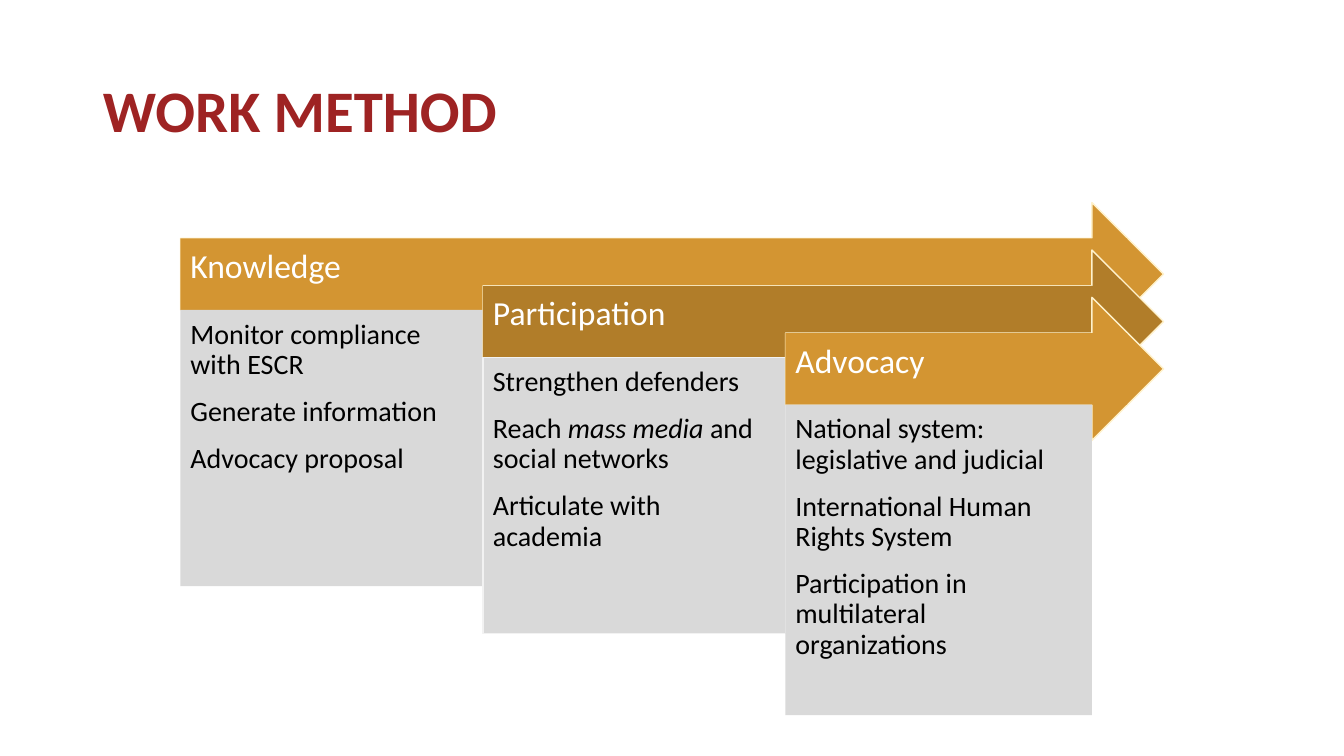
from dataclasses import dataclass

from pptx import Presentation
from pptx.dml.color import RGBColor
from pptx.enum.shapes import MSO_SHAPE
from pptx.enum.text import MSO_ANCHOR, MSO_AUTO_SIZE, PP_ALIGN
from pptx.shapes.autoshape import Shape
from pptx.slide import Slide
from pptx.text.text import TextFrame
from pptx.util import Inches, Pt

RECTANGLE, RIGHT_ARROW = MSO_SHAPE.RECTANGLE, MSO_SHAPE.RIGHT_ARROW
TOP, MIDDLE = MSO_ANCHOR.TOP, MSO_ANCHOR.MIDDLE
LEFT, NO_AUTOFIT = PP_ALIGN.LEFT, MSO_AUTO_SIZE.NONE

RED = RGBColor(0x9E, 0x23, 0x23)
GOLD = RGBColor(0xD3, 0x95, 0x32)
BRONZE = RGBColor(0xB1, 0x7D, 0x29)
CREAM = RGBColor(0xFF, 0xF2, 0xCC)
GREY = RGBColor(0xD9, 0xD9, 0xD9)
PALE_GREY = RGBColor(0xF2, 0xF2, 0xF2)
WHITE = RGBColor(0xFF, 0xFF, 0xFF)
BLACK = RGBColor(0x00, 0x00, 0x00)

FONT = "Calibri"
TITLE_ONLY_LAYOUT = 5
FIRST_LEFT, FIRST_TOP = 1.79, 2.01
STEP_RIGHT, STEP_DOWN = 3.0, 0.47
ARROW_TIP, ARROW_HEIGHT = 11.54, 1.42
BAND_RIGHT, BAND_HEIGHT = 11.18, ARROW_HEIGHT / 2
BAND_INSETS = (0.1, 0.1, 0.28, 0.23)
PANEL_INSETS = (0.1, 0.1, 0.1, 0.1)


@dataclass(frozen=True)
class Span:
    text: str
    italic: bool = False


@dataclass(frozen=True)
class Stage:
    name: str
    color: RGBColor
    items: tuple[tuple[Span, ...], ...]
    panel_width: float = 3.0
    panel_height: float = 2.74
    panel_line: RGBColor | None = None


STAGES = (
    Stage("Knowledge", GOLD, (
        (Span("Monitor compliance with ESCR"),),
        (Span("Generate information"),),
        (Span("Advocacy proposal"),),
    )),
    Stage("Participation", BRONZE, (
        (Span("Strengthen defenders"),),
        (Span("Reach "), Span("mass media ", italic=True), Span("and social networks")),
        (Span("Articulate with academia"),),
    ), panel_line=PALE_GREY),
    Stage("Advocacy", GOLD, (
        (Span("National system: legislative and judicial"),),
        (Span("International Human Rights System"),),
        (Span("Participation in multilateral organizations"),),
    ), panel_width=3.04, panel_height=3.08),
)


def add_block(page: Slide, kind: MSO_SHAPE, left: float, top: float, width: float,
              height: float, fill: RGBColor, line: RGBColor | None = None) -> Shape:
    block = page.shapes.add_shape(kind, Inches(left), Inches(top), Inches(width), Inches(height))
    block.shadow.inherit = False
    block.fill.solid()
    block.fill.fore_color.rgb = fill
    if line is None:
        block.line.fill.background()
    else:
        block.line.color.rgb = line
        block.line.width = Pt(1)
    return block


def set_frame(frame: TextFrame, anchor: MSO_ANCHOR,
              insets: tuple[float, float, float, float]) -> None:
    frame.word_wrap = True
    frame.auto_size = NO_AUTOFIT
    frame.vertical_anchor = anchor
    left, top, right, bottom = insets
    frame.margin_left, frame.margin_top = Inches(left), Inches(top)
    frame.margin_right, frame.margin_bottom = Inches(right), Inches(bottom)


def write_items(frame: TextFrame, items: tuple[tuple[Span, ...], ...], size: int,
                color: RGBColor, bold: bool = False) -> None:
    """Write one left-aligned paragraph per item."""
    for number, item in enumerate(items):
        para = frame.add_paragraph() if number else frame.paragraphs[0]
        para.alignment = LEFT
        para.line_spacing = 0.9
        para.space_before = Pt(6 if number else 0)
        para.space_after = Pt(6 if len(items) > 1 else 0)
        for span in item:
            run = para.add_run()
            run.text = span.text
            run.font.name = FONT
            run.font.size = Pt(size)
            run.font.bold = bold
            run.font.italic = span.italic
            run.font.color.rgb = color


def add_title(page: Slide, text: str) -> None:
    title = page.shapes.title
    title.left, title.top = Inches(0.92), Inches(0.4)
    title.width, title.height = Inches(11.5), Inches(1.45)
    set_frame(title.text_frame, MIDDLE, (0.1, 0.05, 0.1, 0.05))
    write_items(title.text_frame, ((Span(text),),), 42, RED, bold=True)


def add_stage(page: Slide, stage: Stage, number: int) -> None:
    """Draw the arrow, its label band and the panel hanging below it."""
    left = FIRST_LEFT + number * STEP_RIGHT
    top = FIRST_TOP + number * STEP_DOWN
    band_top = top + ARROW_HEIGHT / 4
    add_block(page, RIGHT_ARROW, left, top, ARROW_TIP - left, ARROW_HEIGHT, stage.color, CREAM)

    band = add_block(page, RECTANGLE, left, band_top, BAND_RIGHT - left, BAND_HEIGHT, stage.color)
    set_frame(band.text_frame, MIDDLE, BAND_INSETS)
    write_items(band.text_frame, ((Span(stage.name),),), 24, WHITE)

    panel = add_block(page, RECTANGLE, left, band_top + BAND_HEIGHT, stage.panel_width,
                      stage.panel_height, GREY, stage.panel_line)
    set_frame(panel.text_frame, TOP, PANEL_INSETS)
    write_items(panel.text_frame, stage.items, 20, BLACK)


def main() -> None:
    deck = Presentation()
    deck.slide_width, deck.slide_height = Inches(13.33), Inches(7.5)
    page = deck.slides.add_slide(deck.slide_layouts[TITLE_ONLY_LAYOUT])
    add_title(page, "WORK METHOD")
    for number, stage in enumerate(STAGES):
        add_stage(page, stage, number)
    deck.save("out.pptx")


if __name__ == "__main__":
    main()
